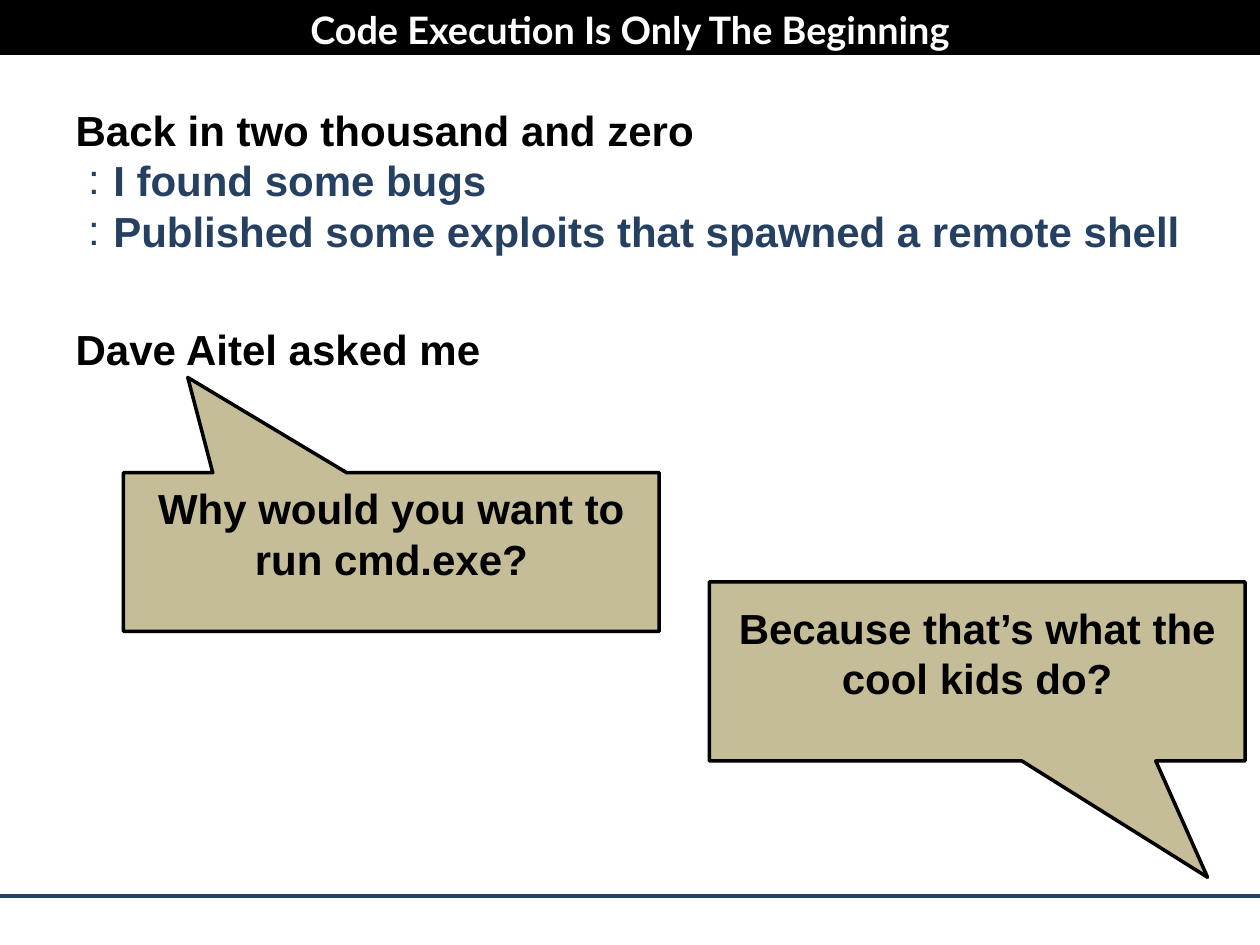
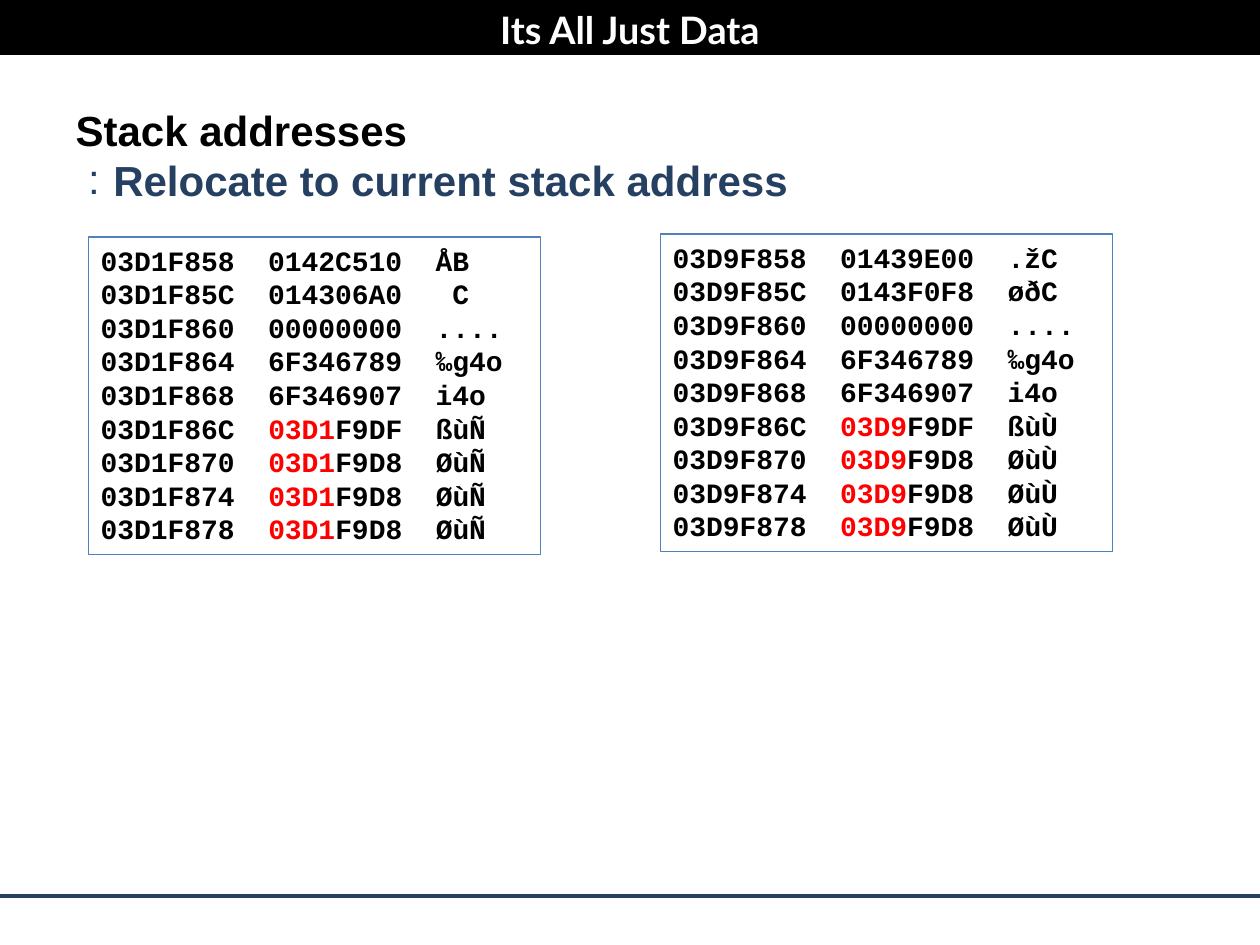
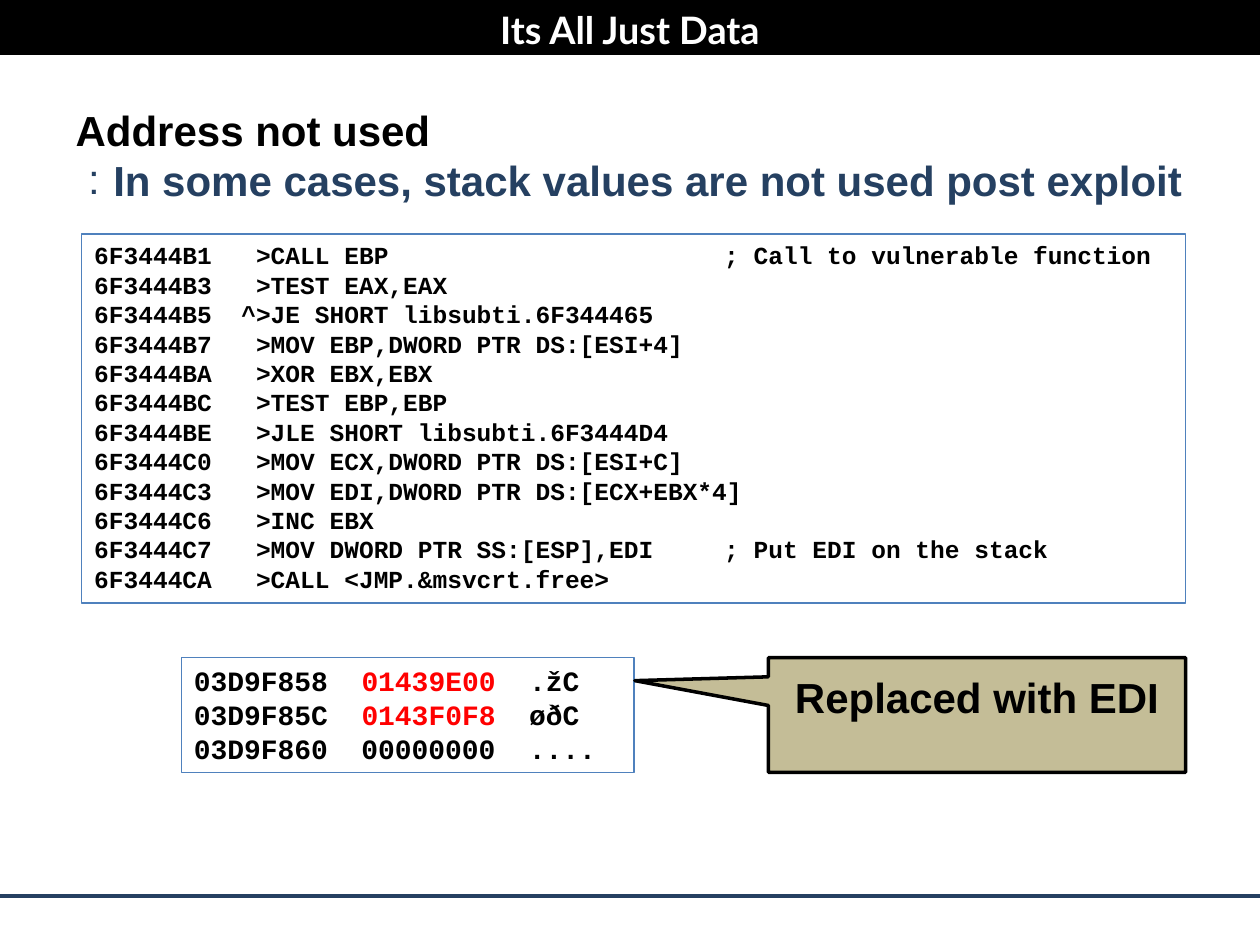
from dataclasses import dataclass

from lxml.etree import SubElement
from pptx import Presentation
from pptx.dml.color import RGBColor
from pptx.enum.shapes import MSO_CONNECTOR, MSO_SHAPE
from pptx.enum.text import MSO_ANCHOR, MSO_AUTO_SIZE, PP_ALIGN
from pptx.oxml.ns import qn
from pptx.util import Cm, Pt

COLORS = {
    "black": "000000",
    "white": "FFFFFF",
    "navy": "254061",
    "tan": "C4BD97",
    "frame": "4F81BD",
    "red": "FF0000",
}
SANS, MONO, HEADING = "Arial", "Courier New", "Lato"
PAGE_WIDTH, PAGE_HEIGHT = 25.4, 19.05
DUMP_WIDTH = 9.12
COMMENT_TAB = 12.7
MARK = "|"  # encloses the highlighted part of a code line


@dataclass(frozen=True)
class Box:
    left: float
    top: float
    width: float
    height: float

    def lengths(self) -> list[Cm]:
        return [Cm(side) for side in (self.left, self.top, self.width, self.height)]


@dataclass(frozen=True)
class Point:
    text: str
    level: int = 0
    space_before: float = 0


@dataclass(frozen=True)
class Listing:
    box: Box
    size: float
    code: str


@dataclass(frozen=True)
class Callout:
    box: Box
    tip: tuple[float, float]
    text: str


@dataclass(frozen=True)
class PageContent:
    title: str
    points: list[Point]
    items: list[Listing | Callout]


TITLE_BOX = Box(0, 0, PAGE_WIDTH, 1.19)
BODY_BOX = Box(1.27, 1.98, 22.86, 15.88)
BAND_BOX = Box(0, 0, PAGE_WIDTH, 1.11)
RULE_TOP = 18.06


# Content
LEFT_STACK = """\
03D1F858  0142C510  ÅB
03D1F85C  014306A0   C
03D1F860  00000000  ....
03D1F864  6F346789  ‰g4o
03D1F868  6F346907  i4o
03D1F86C  |03D1|F9DF  ßùÑ
03D1F870  |03D1|F9D8  ØùÑ
03D1F874  |03D1|F9D8  ØùÑ
03D1F878  |03D1|F9D8  ØùÑ"""

RIGHT_STACK = """\
03D9F858  01439E00  .žC
03D9F85C  0143F0F8  øðC
03D9F860  00000000  ....
03D9F864  6F346789  ‰g4o
03D9F868  6F346907  i4o
03D9F86C  |03D9|F9DF  ßùÙ
03D9F870  |03D9|F9D8  ØùÙ
03D9F874  |03D9|F9D8  ØùÙ
03D9F878  |03D9|F9D8  ØùÙ"""

DISASSEMBLY = """\
6F3444B1   >CALL EBP\t; Call to vulnerable function
6F3444B3   >TEST EAX,EAX
6F3444B5  ^>JE SHORT libsubti.6F344465
6F3444B7   >MOV EBP,DWORD PTR DS:[ESI+4]
6F3444BA   >XOR EBX,EBX
6F3444BC   >TEST EBP,EBP
6F3444BE   >JLE SHORT libsubti.6F3444D4
6F3444C0   >MOV ECX,DWORD PTR DS:[ESI+C]
6F3444C3   >MOV EDI,DWORD PTR DS:[ECX+EBX*4]
6F3444C6   >INC EBX
6F3444C7   >MOV DWORD PTR SS:[ESP],EDI\t; Put EDI on the stack
6F3444CA   >CALL <JMP.&msvcrt.free>"""

REPLACED_STACK = """\
03D9F858  |01439E00|  .žC
03D9F85C  |0143F0F8|  øðC
03D9F860  00000000  ...."""

PAGES = [
    PageContent(
        "Code Execution Is Only The Beginning",
        [
            Point("Back in two thousand and zero"),
            Point("I found some bugs", 1),
            Point("Published some exploits that spawned a remote shell", 1),
            Point("Dave Aitel asked me", space_before=38.5),
        ],
        [
            Callout(Box(2.49, 9.53, 10.8, 3.2), (-0.38, -1.1),
                    "Why would you want to run cmd.exe?"),
            Callout(Box(14.3, 11.73, 10.8, 3.61), (0.43, 1.15),
                    "Because that’s what the cool kids do?"),
        ],
    ),
    PageContent(
        "Its All Just Data",
        [Point("Stack addresses"), Point("Relocate to current stack address", 1)],
        [
            Listing(Box(1.78, 4.78, DUMP_WIDTH, 6.4), 16, LEFT_STACK),
            Listing(Box(13.31, 4.72, DUMP_WIDTH, 6.4), 16, RIGHT_STACK),
        ],
    ),
    PageContent(
        "Its All Just Data",
        [
            Point("Address not used"),
            Point("In some cases, stack values are not used post exploit", 1),
        ],
        [
            Listing(Box(1.65, 4.72, 22.25, 7.44), 14, DISASSEMBLY),
            Listing(Box(3.66, 13.26, DUMP_WIDTH, 2.31), 16, REPLACED_STACK),
            # The tip stops at the dump's frame, level with its first row
            Callout(Box(15.49, 13.26, 8.41, 2.31), (-0.82, -0.3),
                    "Replaced with EDI"),
        ],
    ),
]


# Formatting helpers
def color(name: str) -> RGBColor:
    return RGBColor.from_string(COLORS[name])


def set_font(paragraph, name: str, size: float, color_name: str) -> None:
    font = paragraph.font
    font.name, font.size, font.bold = name, Pt(size), True
    font.color.rgb = color(color_name)


def set_line(shape, color_name: str, width: float) -> None:
    shape.line.color.rgb = color(color_name)
    shape.line.width = Pt(width)


def place(shape, box: Box) -> None:
    shape.left, shape.top, shape.width, shape.height = box.lengths()


def set_bullet(paragraph, level: int) -> None:
    props = paragraph._p.get_or_add_pPr()
    margin, indent = (0.76, -0.51) if level else (0.95, -0.95)
    props.set("marL", str(Cm(margin)))
    props.set("indent", str(Cm(indent)))
    if level:
        SubElement(props, qn("a:buFont")).set("typeface", SANS)
        SubElement(props, qn("a:buChar")).set("char", ":")
    else:
        SubElement(props, qn("a:buNone"))


def set_tab(paragraph, position: float) -> None:
    tabs = SubElement(paragraph._p.get_or_add_pPr(), qn("a:tabLst"))
    tab = SubElement(tabs, qn("a:tab"))
    tab.set("pos", str(Cm(position)))
    tab.set("algn", "l")


# Shared layout: placeholder places, title band and bottom rule
def prepare_layout(layout, page) -> None:
    for holder in list(layout.placeholders):
        if holder.placeholder_format.idx > 1:
            holder._element.getparent().remove(holder._element)
    title, body = layout.placeholders
    place(title, TITLE_BOX)
    place(body, BODY_BOX)

    band = page.shapes.add_shape(MSO_SHAPE.RECTANGLE, *BAND_BOX.lengths())
    band.shadow.inherit = False
    band.fill.solid()
    band.fill.fore_color.rgb = color("black")
    band.line.fill.background()

    rule = page.shapes.add_connector(
        MSO_CONNECTOR.STRAIGHT, 0, Cm(RULE_TOP), Cm(PAGE_WIDTH), Cm(RULE_TOP))
    set_line(rule, "navy", 2)
    SubElement(rule._element.spPr, qn("a:effectLst"))

    # Shapes can only be drawn on a slide, so move them behind the layout's own
    for shape in (band, rule):
        layout.shapes._spTree.insert(2, shape._element)


# Slide parts
def write_title(page, text: str) -> None:
    frame = page.shapes.title.text_frame
    frame.text = text
    frame.auto_size = MSO_AUTO_SIZE.NONE
    frame.vertical_anchor = MSO_ANCHOR.MIDDLE
    para = frame.paragraphs[0]
    para.alignment = PP_ALIGN.CENTER
    set_font(para, HEADING, 21.6, "white")


def write_points(page, points: list[Point]) -> None:
    frame = page.placeholders[1].text_frame
    frame.text = "\n".join(point.text for point in points)
    frame.auto_size = MSO_AUTO_SIZE.NONE
    for para, point in zip(frame.paragraphs, points):
        para.level = point.level
        para.space_before = Pt(point.space_before)
        set_bullet(para, point.level)
        set_font(para, SANS, 24, "navy" if point.level else "black")


def draw_listing(page, listing: Listing) -> None:
    box = page.shapes.add_textbox(*listing.box.lengths())
    set_line(box, "frame", 0.75)
    frame = box.text_frame
    frame.word_wrap = True
    for number, line in enumerate(listing.code.split("\n")):
        para = frame.add_paragraph() if number else frame.paragraphs[0]
        if "\t" in line:
            set_tab(para, COMMENT_TAB)
        set_font(para, MONO, listing.size, "black")
        for position, part in enumerate(line.split(MARK)):
            span = para.add_run()
            span.text = part
            if position % 2:
                span.font.color.rgb = color("red")


def draw_callout(page, callout: Callout) -> None:
    shape = page.shapes.add_shape(
        MSO_SHAPE.RECTANGULAR_CALLOUT, *callout.box.lengths())
    shape.adjustments[0], shape.adjustments[1] = callout.tip
    shape.shadow.inherit = False
    shape.fill.solid()
    shape.fill.fore_color.rgb = color("tan")
    set_line(shape, "black", 2)
    frame = shape.text_frame
    frame.word_wrap = True
    frame.vertical_anchor = MSO_ANCHOR.MIDDLE
    frame.margin_bottom = Cm(0.88)
    frame.text = callout.text
    para = frame.paragraphs[0]
    para.alignment = PP_ALIGN.CENTER
    set_font(para, SANS, 24, "black")


def main() -> None:
    deck = Presentation()
    deck.slide_width, deck.slide_height = Cm(PAGE_WIDTH), Cm(PAGE_HEIGHT)
    layout = deck.slide_layouts[1]
    for number, content in enumerate(PAGES):
        page = deck.slides.add_slide(layout)
        if number == 0:
            prepare_layout(layout, page)
        write_title(page, content.title)
        write_points(page, content.points)
        for item in content.items:
            if isinstance(item, Listing):
                draw_listing(page, item)
            else:
                draw_callout(page, item)
    deck.save("out.pptx")


if __name__ == "__main__":
    main()
